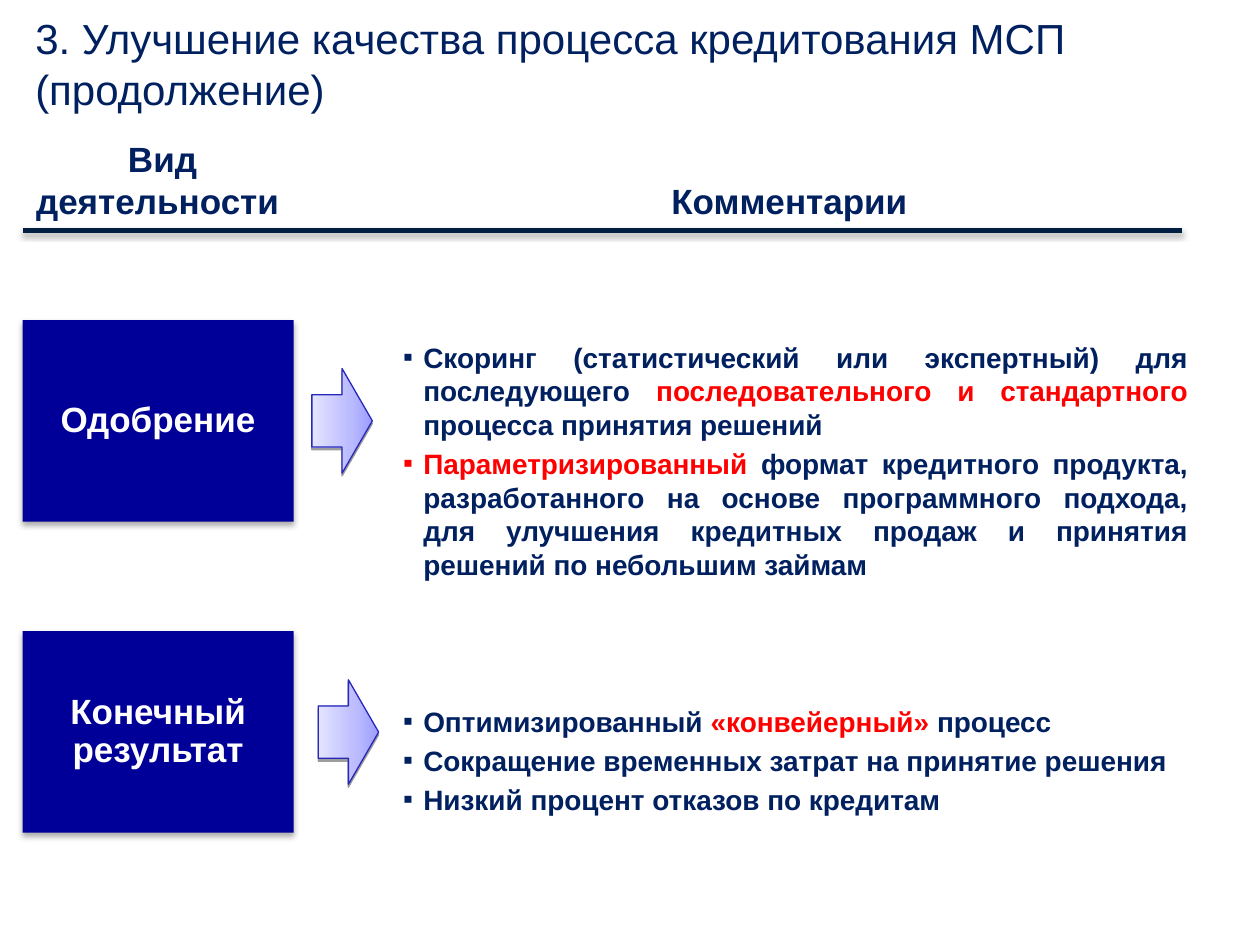
from copy import deepcopy

from lxml import etree
from pptx import Presentation
from pptx.dml.color import RGBColor
from pptx.enum.shapes import MSO_CONNECTOR, MSO_SHAPE
from pptx.enum.text import MSO_ANCHOR, MSO_AUTO_SIZE, PP_ALIGN
from pptx.oxml.ns import qn
from pptx.util import Inches, Pt

LEFT, CENTER, JUSTIFY = PP_ALIGN.LEFT, PP_ALIGN.CENTER, PP_ALIGN.JUSTIFY
TOP, MIDDLE, BOTTOM = MSO_ANCHOR.TOP, MSO_ANCHOR.MIDDLE, MSO_ANCHOR.BOTTOM

COLORS = {
    "text": "002060",
    "accent": "FF0000",
    "box": "000099",
    "white": "FFFFFF",
    "rule": "021F43",
    "arrow_line": "2828B8",
    "shadow": "000000",
}
ARROW_GRADIENT = [(0, "9C9CFF"), (0.35, "BABAFF"), (1, "E4E4FF")]

HEADING = {"name": "Arial", "size": Pt(20), "bold": True}
TITLE = {"name": "Arial", "size": Pt(24), "bold": False}
BODY = {"name": "Arial", "size": Pt(16), "bold": True}

# Stage name, box top, arrow left and arrow top
STAGES = [
    ("Одобрение", 2.54, 2.3, 3.1),
    ("Конечный результат", 5.01, 2.35, 5.57),
]

# Alignment, space before in points, and runs of text and colour
COMMENTS = [
    (JUSTIFY, 0, [
        ("Скоринг (статистический или экспертный) для последующего ", "text"),
        ("последовательного и стандартного ", "accent"),
        ("процесса принятия решений", "text"),
    ]),
    (JUSTIFY, 3.2, [
        ("Параметризированный ", "accent"),
        ("формат кредитного продукта, разработанного на основе программного "
         "подхода, для улучшения кредитных продаж и принятия решений по "
         "небольшим займам", "text"),
    ]),
    (LEFT, 70.5, [
        ("Оптимизированный ", "text"),
        ("«конвейерный» ", "accent"),
        ("процесс", "text"),
    ]),
    (JUSTIFY, 3.2, [("Сокращение временных затрат на принятие решения", "text")]),
    (JUSTIFY, 3.2, [("Низкий процент отказов по кредитам", "text")]),
]


def rgb(name):
    return RGBColor.from_string(COLORS[name])


def place(shape, left, top, width, height):
    shape.left, shape.top = Inches(left), Inches(top)
    shape.width, shape.height = Inches(width), Inches(height)


def set_frame(shape, anchor, inset_x=0, inset_y=0, wrap=True):
    values = {
        "auto_size": MSO_AUTO_SIZE.NONE,
        "word_wrap": wrap,
        "vertical_anchor": anchor,
        "margin_left": Inches(inset_x),
        "margin_right": Inches(inset_x),
        "margin_top": Inches(inset_y),
        "margin_bottom": Inches(inset_y),
    }
    for name, value in values.items():
        setattr(shape.text_frame, name, value)
    return shape.text_frame.paragraphs[0]


def add_run(paragraph, text, font_format, color):
    run = paragraph.add_run()
    run.text = text
    for name, value in font_format.items():
        setattr(run.font, name, value)
    run.font.color.rgb = rgb(color)


def set_shadow(shape, opacity, blur, distance):
    properties = shape._element.spPr
    effects = properties.find(qn("a:effectLst"))
    if effects is None:
        effects = etree.SubElement(properties, qn("a:effectLst"))
    shadow = etree.SubElement(
        effects, qn("a:outerShdw"), blurRad=str(Pt(blur)), dist=str(Pt(distance)),
        dir="5400000", algn="t", rotWithShape="0")
    color = etree.SubElement(shadow, qn("a:srgbClr"), val=COLORS["shadow"])
    etree.SubElement(color, qn("a:alpha"), val=str(opacity * 1000))


def add_title(slide, text):
    title = slide.shapes.title
    place(title, 0.18, 0.25, 9.22, 0.5)
    paragraph = set_frame(title, MIDDLE, 0.1, 0.05)
    paragraph.alignment = LEFT
    add_run(paragraph, text, TITLE, "text")


def add_heading(slide, text, bounds, anchor, wrap):
    heading = slide.shapes.add_textbox(*map(Inches, bounds))
    paragraph = set_frame(heading, anchor, wrap=wrap)
    paragraph.alignment = CENTER
    add_run(paragraph, text, HEADING, "text")


def add_rule(slide):
    rule = slide.shapes.add_connector(
        MSO_CONNECTOR.STRAIGHT, Inches(0.18), Inches(1.83), Inches(9.38), Inches(1.83))
    rule.line.color.rgb = rgb("rule")
    rule.line.width = Pt(3)
    set_shadow(rule, 35, 3.1, 1.8)


def add_stage_box(slide, text, top):
    box = slide.shapes.add_shape(
        MSO_SHAPE.RECTANGLE, Inches(0.18), Inches(top), Inches(2.15), Inches(1.6))
    box.shadow.inherit = False
    box.fill.solid()
    box.fill.fore_color.rgb = rgb("box")
    box.line.fill.background()
    set_shadow(box, 32, 3.5, 2.2)
    paragraph = set_frame(box, MIDDLE, 0.05, 0.05)
    paragraph.alignment = CENTER
    paragraph.line_spacing = 0.9
    add_run(paragraph, text, HEADING, "white")


def add_arrow(slide, left, top):
    arrow = slide.shapes.add_shape(
        MSO_SHAPE.DOWN_ARROW, Inches(left), Inches(top), Inches(0.83), Inches(0.48))
    arrow.rotation = 270
    arrow.shadow.inherit = False
    arrow.line.color.rgb = rgb("arrow_line")
    arrow.line.width = Pt(0.75)
    # Gradient from the tip back to the tail, with a third stop added
    arrow.fill.gradient()
    arrow.fill.gradient_angle = 90
    stop_list = arrow._element.spPr.find(".//" + qn("a:gsLst"))
    stop_list.append(deepcopy(stop_list[0]))
    for stop, (position, color) in zip(arrow.fill.gradient_stops, ARROW_GRADIENT):
        stop.position = position
        stop.color.rgb = RGBColor.from_string(color)
    set_shadow(arrow, 38, 0, 1.6)


def add_comments(slide):
    body = slide.placeholders[1]
    place(body, 3.2, 2.7, 6.23, 3.88)
    paragraph = set_frame(body, TOP)
    for index, (alignment, space_before, runs) in enumerate(COMMENTS):
        if index:
            paragraph = body.text_frame.add_paragraph()
        paragraph.alignment = alignment
        paragraph.space_before = Pt(space_before)
        properties = paragraph._p.get_or_add_pPr()
        properties.set("marL", str(Inches(0.16)))
        properties.set("indent", str(Inches(-0.16)))
        etree.SubElement(properties, qn("a:buChar"), char="▪")
        for text, color in runs:
            add_run(paragraph, text, BODY, color)


def main():
    presentation = Presentation()
    presentation.slide_width, presentation.slide_height = Inches(10), Inches(7.5)
    slide = presentation.slides.add_slide(presentation.slide_layouts[1])

    # Title and column headings
    add_title(slide, "3. Улучшение качества процесса кредитования МСП (продолжение)")
    add_heading(slide, "Вид деятельности ", (0.12, 1.09, 2.34, 0.67), TOP, True)
    add_heading(slide, "Комментарии", (4.07, 1.44, 4.39, 0.32), BOTTOM, False)
    add_rule(slide)

    # Stages with their comments
    for text, box_top, arrow_left, arrow_top in STAGES:
        add_stage_box(slide, text, box_top)
        add_arrow(slide, arrow_left, arrow_top)
    add_comments(slide)

    presentation.save("out.pptx")


if __name__ == "__main__":
    main()
